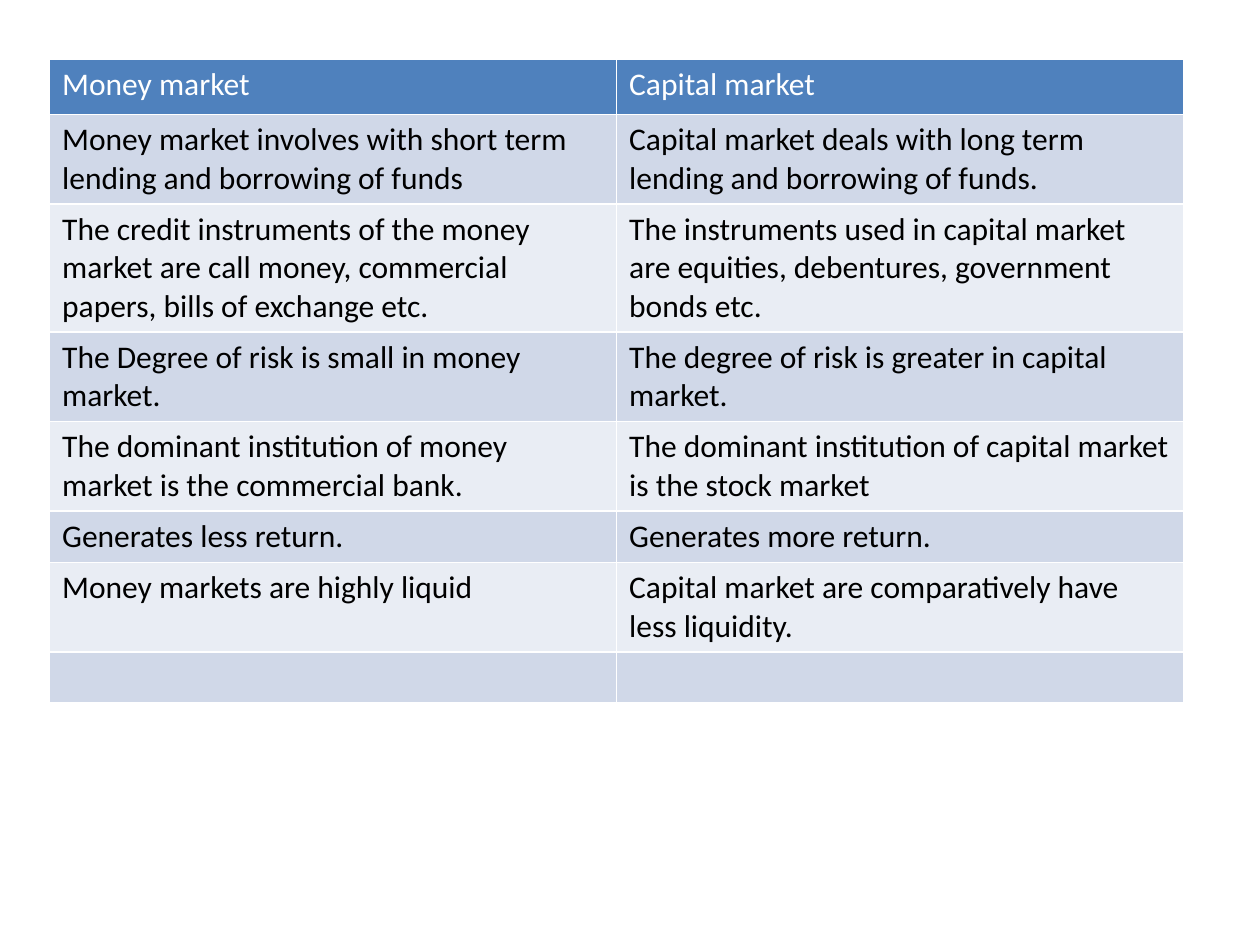
from pptx import Presentation
from pptx import util as u
from pptx.dml import color

COLORS = {"header": "4F81BD", "odd": "D0D8E8", "even": "E9EDF4",
          "light": "FFFFFF", "dark": "000000"}

COMPARISON = [
    ("Money market", "Capital market"),
    ("Money market involves with short term lending and borrowing of funds",
     "Capital market deals with long term lending and borrowing of funds."),
    ("The credit instruments of the money market are call money, commercial "
     "papers, bills of exchange etc.",
     "The instruments used in capital market are equities, debentures, "
     "government bonds etc."),
    ("The Degree of risk is small in money market.",
     "The degree of risk is greater in capital market."),
    ("The dominant institution of money market is the commercial bank.",
     "The dominant institution of capital market is the stock market"),
    ("Generates less return.", "Generates more return."),
    ("Money markets are highly liquid",
     "Capital market are comparatively have less liquidity."),
    ("", ""),
]

prs = Presentation()
prs.slide_width, prs.slide_height = u.Cm(25.4), u.Cm(19.05)
slide = prs.slides.add_slide(prs.slide_layouts[6])

markets = slide.shapes.add_table(len(COMPARISON), 2, u.Cm(1), u.Cm(1.2),
                                 u.Cm(22.86), u.Cm(12.83)).table

for index, points in enumerate(COMPARISON):
    markets.rows[index].height = u.Cm(1.03 if index else 1.11)
    band = "header" if index == 0 else "odd" if index % 2 else "even"
    for cell, point in zip(markets.rows[index].cells, points):
        cell.fill.solid()
        cell.fill.fore_color.rgb = color.RGBColor.from_string(COLORS[band])
        cell.text_frame.text = point
        for run in cell.text_frame.paragraphs[0].runs:
            run.font.name = "Calibri"
            run.font.size = u.Pt(18)
            run.font.bold = False
            run.font.color.rgb = color.RGBColor.from_string(
                COLORS["dark" if index else "light"])

prs.save("out.pptx")
